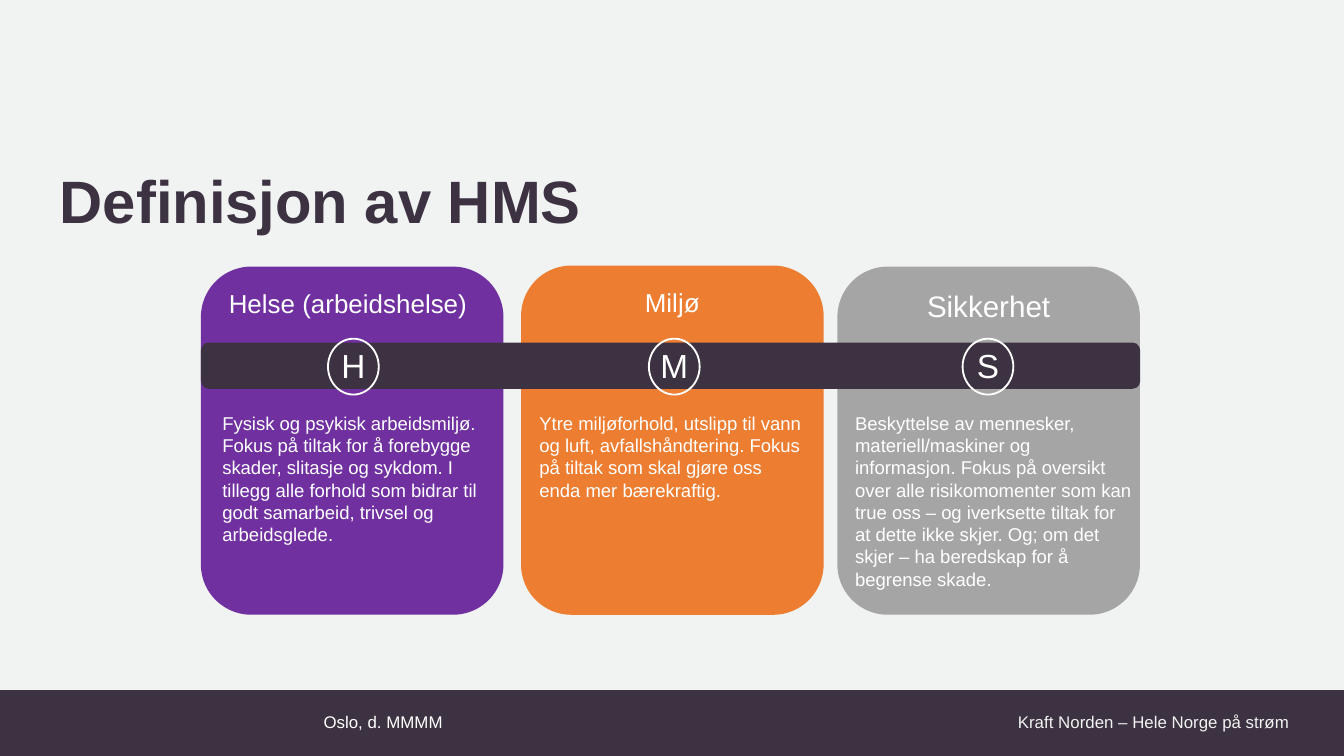
"""Build the slide that defines HMS with three cards joined by a dark band."""
from dataclasses import dataclass

from pptx import Presentation
from pptx.dml.color import RGBColor
from pptx.enum.shapes import MSO_SHAPE as Shape
from pptx.enum.text import MSO_ANCHOR as Anchor, MSO_AUTO_SIZE as AutoSize, PP_ALIGN as Align
from pptx.shapes.autoshape import Shape as AutoShape
from pptx.slide import Slide
from pptx.util import Pt

COLORS = {
    "paper": "F1F3F2",
    "dark": "3D3242",
    "white": "FFFFFF",
    "footer": "F1F2F2",
    "purple": "7030A0",
    "orange": "ED7D31",
    "gray": "A5A5A5",
}
FONT = "Arial"
CARD_W, CARD_BOTTOM = 163.4, 332
BADGE_Y, BADGE_W, BADGE_H = 182.9, 27.4, 30.2


@dataclass(frozen=True)
class Box:
    x: float
    y: float
    w: float
    h: float


@dataclass(frozen=True)
class TextStyle:
    size: float
    color: str = "white"
    align: Align = Align.LEFT
    bold: bool = False


@dataclass(frozen=True)
class Card:
    heading: str
    style: TextStyle
    fill: str
    x: float
    y: float
    letter: str
    badge_x: float
    body: str
    body_box: Box


CARDS = [
    Card("Helse (arbeidshelse)", TextStyle(14), "purple", 108.5, 144, "H", 177.1,
         "Fysisk og psykisk arbeidsmiljø. Fokus på tiltak for å forebygge skader, "
         "slitasje og sykdom. I tillegg alle forhold som bidrar til godt samarbeid, "
         "trivsel og arbeidsglede.", Box(113, 218.9, 163.4, 79.9)),
    Card("Miljø", TextStyle(14, align=Align.CENTER), "orange", 281.4, 143.4, "M", 350.4,
         "Ytre miljøforhold, utslipp til vann og luft, avfallshåndtering. Fokus på "
         "tiltak som skal gjøre oss enda mer bærekraftig.", Box(284.2, 218.9, 157, 55.4)),
    Card("Sikkerhet", TextStyle(16, align=Align.CENTER), "gray", 452.2, 144, "S", 519.8,
         "Beskyttelse av mennesker, materiell/maskiner og informasjon. Fokus på "
         "oversikt over alle risikomomenter som kan true oss – og iverksette tiltak "
         "for at dette ikke skjer. Og; om det skjer – ha beredskap for å begrense skade.",
         Box(454.7, 218.9, 163.4, 104.4)),
]


def rgb(name: str) -> RGBColor:
    return RGBColor.from_string(COLORS[name])


def write(sp: AutoShape, text: str, style: TextStyle,
          anchor: Anchor = Anchor.TOP, wrap: bool = True) -> None:
    tf = sp.text_frame
    tf.word_wrap = wrap
    tf.auto_size = AutoSize.NONE
    tf.vertical_anchor = anchor
    p = tf.paragraphs[0]
    p.alignment = style.align
    r = p.add_run()
    r.text = text
    r.font.name = FONT
    r.font.size = Pt(style.size)
    r.font.bold = style.bold
    r.font.color.rgb = rgb(style.color)


def add_text(s: Slide, box: Box, text: str, style: TextStyle,
             anchor: Anchor = Anchor.TOP, wrap: bool = True) -> None:
    sp = s.shapes.add_textbox(Pt(box.x), Pt(box.y), Pt(box.w), Pt(box.h))
    write(sp, text, style, anchor, wrap)


def add_filled(s: Slide, kind: Shape, box: Box, fill: str) -> AutoShape:
    sp = s.shapes.add_shape(kind, Pt(box.x), Pt(box.y), Pt(box.w), Pt(box.h))
    sp.shadow.inherit = False
    sp.fill.solid()
    sp.fill.fore_color.rgb = rgb(fill)
    sp.line.fill.background()
    return sp


def add_badge(s: Slide, card: Card) -> None:
    box = Box(card.badge_x, BADGE_Y, BADGE_W, BADGE_H)
    add_text(s, box, card.letter, TextStyle(18, align=Align.CENTER), wrap=False)
    sp = s.shapes.add_shape(Shape.OVAL, Pt(box.x), Pt(box.y), Pt(box.w), Pt(box.h))
    sp.shadow.inherit = False
    sp.fill.background()
    sp.line.color.rgb = rgb("white")
    sp.line.width = Pt(1)


def main() -> None:
    prs = Presentation()
    prs.slide_width, prs.slide_height = Pt(725.76), Pt(408.24)
    s = prs.slides.add_slide(prs.slide_layouts[6])
    s.background.fill.solid()
    s.background.fill.fore_color.rgb = rgb("paper")

    add_filled(s, Shape.RECTANGLE, Box(0, 372.6, 725.76, 35.64), "dark")
    add_text(s, Box(542.6, 380.6, 170.6, 18.7), "Kraft Norden – Hele Norge på strøm",
             TextStyle(9.1, "footer"))
    add_text(s, Box(25.2, 84.2, 626.4, 46.8), "Definisjon av HMS",
             TextStyle(32.3, "dark", bold=True), Anchor.MIDDLE)
    add_text(s, Box(82.8, 378.7, 163.4, 21.6), "Oslo, d. MMMM",
             TextStyle(9.1, align=Align.RIGHT), Anchor.MIDDLE)

    for card in CARDS:
        box = Box(card.x, card.y, CARD_W, CARD_BOTTOM - card.y)
        sp = add_filled(s, Shape.ROUNDED_RECTANGLE, box, card.fill)
        write(sp, card.heading, card.style)
    add_filled(s, Shape.ROUNDED_RECTANGLE, Box(108.5, 185, 507.2, 25), "dark")
    for card in CARDS:
        add_text(s, card.body_box, card.body, TextStyle(10))
        add_badge(s, card)

    prs.save("out.pptx")


if __name__ == "__main__":
    main()
